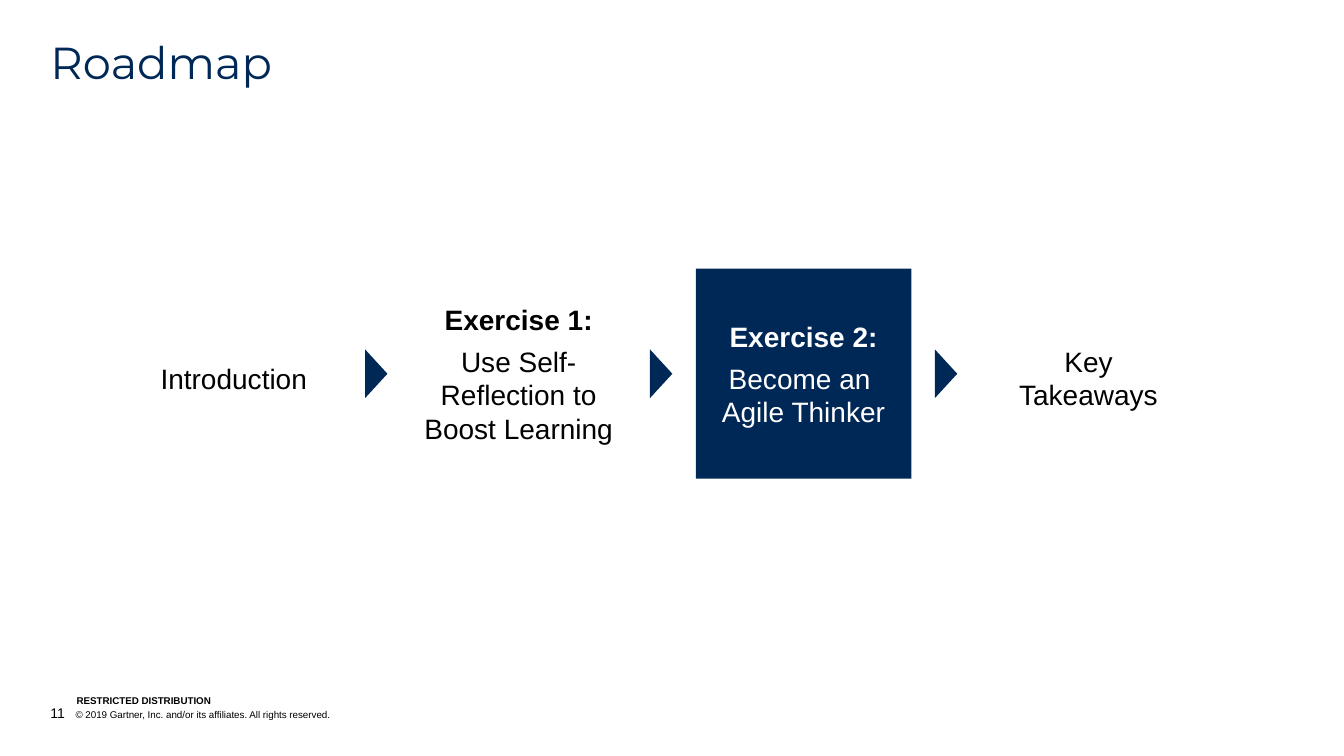
from lxml import etree
from pptx import Presentation
from pptx import util as u
from pptx.dml.color import RGBColor
from pptx.enum import shapes, text
from pptx.oxml.ns import qn

COLORS = {"navy": "002856", "black": "000000", "white": "FFFFFF"}


class Deck:
    """Holds the style and the current slide and draws each kind of element."""

    def __init__(self, width, height):
        self.prs = Presentation()
        self.prs.slide_width, self.prs.slide_height = u.Pt(width), u.Pt(height)
        self.s = self.prs.slides.add_slide(self.prs.slide_layouts[6])
        self.font = "Arial"

    def color(self, name):
        return RGBColor.from_string(COLORS[name])

    def style(self, r, size, color, bold=False, font=None):
        r.font.name = font or self.font
        r.font.size = u.Pt(size)
        r.font.bold = bold
        r.font.color.rgb = self.color(color)

    def frame(self, sp, anchor):
        tf = sp.text_frame
        tf.word_wrap = True
        tf.margin_left = tf.margin_right = tf.margin_top = tf.margin_bottom = 0
        tf.vertical_anchor = anchor
        return tf

    def box(self, x, y, w, h, anchor):
        sp = self.s.shapes.add_textbox(u.Pt(x), u.Pt(y), u.Pt(w), u.Pt(h))
        return self.frame(sp, anchor)

    def shape(self, kind, x, y, w, h, fill):
        sp = self.s.shapes.add_shape(kind, u.Pt(x), u.Pt(y), u.Pt(w), u.Pt(h))
        sp.shadow.inherit = False
        sp.fill.solid()
        sp.fill.fore_color.rgb = self.color(fill)
        sp.line.fill.background()
        return sp

    def title(self, words, x, y, w, h):
        tf = self.box(x, y, w, h, text.MSO_ANCHOR.TOP)
        tf.text = words
        p = tf.paragraphs[0]
        p.line_spacing = 0.9
        self.style(p.runs[0], 32, "navy", font="Montserrat")

    def step(self, heading, body, x, y, w, h, active):
        anchor = text.MSO_ANCHOR.MIDDLE
        if active:
            sp = self.shape(shapes.MSO_SHAPE.RECTANGLE, x, y, w, h, "navy")
            tf = self.frame(sp, anchor)
        else:
            tf = self.box(x, y, w, h, anchor)
        p = tf.paragraphs[0]
        if heading:
            p.text = heading
            p.space_after = u.Pt(6)
            p = tf.add_paragraph()
        p.text = body
        if active:
            p.space_after = u.Pt(6)
        for p in tf.paragraphs:
            p.alignment = text.PP_ALIGN.CENTER
            for r in p.runs:
                self.style(r, 20, "white" if active else "black", p.text == heading)

    def arrow(self, cx, cy, length, depth):
        sp = self.shape(shapes.MSO_SHAPE.ISOSCELES_TRIANGLE, cx - length / 2,
                        cy - depth / 2, length, depth, "navy")
        sp.rotation = 90

    def footer(self, runs, x, y, w, h, indent=0):
        p = self.box(x, y, w, h, text.MSO_ANCHOR.BOTTOM).paragraphs[0]
        if indent:
            pos = str(int(u.Pt(indent)))
            pPr = p._p.get_or_add_pPr()
            pPr.set("marL", pos)
            pPr.set("indent", "-" + pos)
            tabs = etree.SubElement(pPr, qn("a:tabLst"))
            etree.SubElement(tabs, qn("a:tab"), pos=pos, algn="l")
        for words, size, bold in runs:
            r = p.add_run()
            r.text = words
            self.style(r, size, "black", bold)


STEPS = [
    ("", "Introduction", 195),
    ("Exercise 1:", "Use Self-Reflection to Boost Learning", 192),
    ("Exercise 2:", "Become an \vAgile Thinker", 192),
    ("", "Key\vTakeaways", 195),
]
LEFT, PITCH, WIDTH, HEIGHT = 90, 203.5, 154, 150
GAP = PITCH - WIDTH


def main():
    d = Deck(960, 540)
    d.footer([("11", 10, False),
              ("\t© 2019 Gartner, Inc. and/or its affiliates. All rights reserved.", 7, False)],
             36, 503.3, 575, 12.2, indent=18)
    d.footer([("RESTRICTED DISTRIBUTION", 7, True)], 54.7, 496, 182, 8.6)
    d.title("Roadmap", 36, 28.8, 888, 34.6)
    for i, (heading, body, top) in enumerate(STEPS):
        x = LEFT + i * PITCH
        d.step(heading, body, x, top, WIDTH, HEIGHT, active=i == 2)
        if i < len(STEPS) - 1:
            d.arrow(x + WIDTH + GAP / 2, 267, 34.8, 16)
    d.prs.save("out.pptx")


if __name__ == "__main__":
    main()
